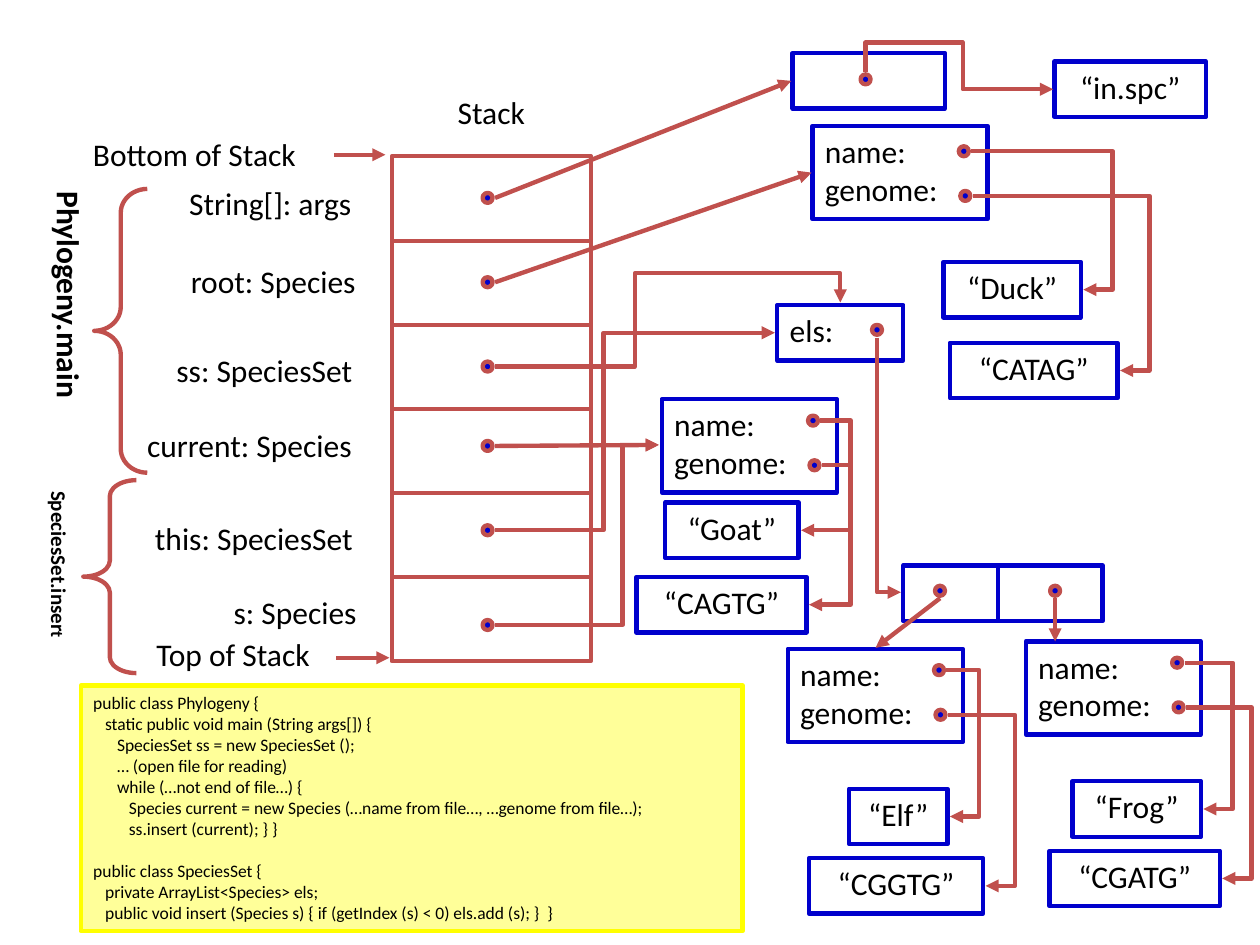
from lxml import etree
from pptx import Presentation
from pptx.dml.color import RGBColor
from pptx.enum.shapes import MSO_CONNECTOR, MSO_SHAPE
from pptx.enum.text import MSO_ANCHOR, MSO_AUTO_SIZE, PP_ALIGN
from pptx.oxml.ns import qn
from pptx.util import Cm, Pt

RED = RGBColor(0xC0, 0x50, 0x4D)
BLUE = RGBColor(0x00, 0x00, 0xCC)
BLACK = RGBColor(0x00, 0x00, 0x00)
PALE = RGBColor(0xFF, 0xFF, 0x99)
YELLOW = RGBColor(0xFF, 0xFF, 0x00)
RECT, OVAL, BRACE = MSO_SHAPE.RECTANGLE, MSO_SHAPE.OVAL, MSO_SHAPE.LEFT_BRACE
STRAIGHT, ELBOW = MSO_CONNECTOR.STRAIGHT, MSO_CONNECTOR.ELBOW
LEFT, CENTER = PP_ALIGN.LEFT, PP_ALIGN.CENTER
TOP, GROW = MSO_ANCHOR.TOP, MSO_AUTO_SIZE.SHAPE_TO_FIT_TEXT

ROW = 1.12
GAP = 0.15
SLOT = 9.83

LABELS = [
    ("Stack", 8.76, 1.75, 2.29),
    ("Bottom of Stack", 1.09, 2.59, 5.66),
    ("String[]: args", 3.0, 3.58, 4.9),
    ("root: Species", 3.15, 5.16, 4.72),
    ("ss: SpeciesSet", 2.74, 6.96, 5.18),
    ("current: Species", 2.16, 8.46, 5.74),
    ("this: SpeciesSet", 2.29, 10.34, 5.66),
    ("s: Species", 4.06, 11.84, 3.78),
    ("Top of Stack", 2.44, 12.67, 4.52),
]
SPECIES = [
    (16.38, 2.54, 0.51, ("“Duck”", 19.02, 5.28, 2.77), ("“CATAG”", 19.15, 6.91, 3.38)),
    (13.34, 8.05, 0.43, ("“Goat”", 13.41, 10.13, 2.69), ("“CAGTG”", 12.83, 11.63, 3.43)),
    (15.88, 13.08, 0.43, ("“Elf”", 17.12, 15.9, 1.98), ("“CGGTG”", 16.31, 17.3, 3.51)),
    (20.68, 12.93, 0.43, ("“Frog”", 21.62, 15.75, 2.59), ("“CGATG”", 21.16, 17.15, 3.43)),
]
CODE = [
    (0, "public class Phylogeny {"),
    (1, "static public void main (String args[]) {"),
    (2, "SpeciesSet ss = new SpeciesSet ();"),
    (2, "… (open file for reading)"),
    (2, "while (…not end of file…) {"),
    (3, "Species current = new Species (…name from file…, …genome from file…);"),
    (3, "ss.insert (current); } }"),
    (0, "public class SpeciesSet {"),
    (1, "private ArrayList<Species> els;"),
    (1, "public void insert (Species s) { if (getIndex (s) < 0) els.add (s); }  }"),
]


def add_run(para, text, size=18, bold=False):
    """Add one run of black Calibri."""
    run = para.add_run()
    run.text = text
    font = run.font
    font.name, font.size, font.bold = "Calibri", Pt(size), bold
    font.color.rgb = BLACK


def write(shape, lines, align=CENTER, wrap=False, size=18):
    """Fill a shape with one paragraph a line."""
    frame = shape.text_frame
    frame.word_wrap, frame.auto_size = wrap, GROW
    frame.vertical_anchor = TOP
    for i, line in enumerate(lines):
        para = frame.add_paragraph() if i else frame.paragraphs[0]
        para.alignment = align
        add_run(para, line, size)
    return frame


def draw(slide, kind, left, top, width, height, line, fill=None):
    """Add an outlined preset shape."""
    shape = slide.shapes.add_shape(kind, Cm(left), Cm(top), Cm(width), Cm(height))
    shape.shadow.inherit = False
    shape.line.color.rgb, shape.line.width = line, Pt(2.5)
    if fill is None:
        shape.fill.background()
    else:
        shape.fill.solid()
        shape.fill.fore_color.rgb = fill
    return shape


def add_dot(slide, x, y):
    """Add a pointer dot centred on a point."""
    draw(slide, OVAL, x - 0.1, y - 0.1, 0.2, 0.2, RED, BLUE)


def link(slide, start, stop, kind=STRAIGHT, arrow=True):
    """Add a red connector."""
    line = slide.shapes.add_connector(kind, *map(Cm, start + stop))
    line.line.color.rgb, line.line.width = RED, Pt(2.5)
    props = line._element.spPr
    if arrow:
        etree.SubElement(props.find(qn("a:ln")), qn("a:tailEnd"), type="triangle")
    etree.SubElement(props, qn("a:effectLst"))
    return props


def bend(slide, start, stop, turns, tall=False):
    """Add an elbow arrow turning at given places, leaving vertically if tall."""
    first, last = start, stop
    if tall:
        midx, midy = (start[0] + stop[0]) / 2, (start[1] + stop[1]) / 2
        half, rise = (stop[0] - start[0]) / 2, (stop[1] - start[1]) / 2
        first, last = (midx - rise, midy + half), (midx + rise, midy - half)
        start, stop = start[::-1], stop[::-1]
    props = link(slide, first, last, ELBOW)
    if tall:
        props.find(qn("a:xfrm")).set("rot", "5400000")
    geom = props.find(qn("a:prstGeom"))
    geom.set("prst", f"bentConnector{len(turns) + 2}")
    guides = geom.find(qn("a:avLst"))
    for i, turn in enumerate(turns):
        part = (turn - start[i]) / (stop[i] - start[i])
        etree.SubElement(guides, qn("a:gd"), name=f"adj{i + 1}",
                         fmla=f"val {round(part * 100000)}")


def add_label(slide, text, left, top, width):
    """Add a one-line label."""
    box = slide.shapes.add_textbox(Cm(left), Cm(top), Cm(width), Cm(1.02))
    write(box, [text])


def add_side(slide, runs, left, top, width, height):
    """Add a bold label that reads downwards."""
    box = slide.shapes.add_textbox(Cm(left), Cm(top), Cm(width), Cm(height))
    frame = write(box, [], wrap=True)
    frame._txBody.bodyPr.set("vert", "eaVert")
    para = frame.paragraphs[0]
    para.alignment = CENTER
    for text, size in runs:
        add_run(para, text, size, True)


def add_string(slide, text, left, top, width):
    """Add a boxed string value."""
    write(draw(slide, RECT, left, top, width, ROW, BLUE), [text])


def add_species(slide, left, top, drop, *values):
    """Add a species object with arrows to its two strings."""
    box = draw(slide, RECT, left, top, 3.53, 1.88, BLUE)
    write(box, ["name:", "genome:"], LEFT, True)
    for i, value in enumerate(values):
        x, y = left + 3.05 + 0.03 * i, top + drop + 0.9 * i
        add_string(slide, *value)
        add_dot(slide, x, y)
        edge = value[1] + value[3]
        turn = max(edge + 0.64, left + 3.81)
        bend(slide, (x + GAP, y), (edge + 0.05, value[2] + ROW / 2), [turn])


def add_stack(slide):
    """Add the stack frame, its slots and its end markers."""
    draw(slide, RECT, 7.9, 3.15, 4.01, 10.18, RED)
    for i in range(1, 7):
        y = 3.16 + 10.16 / 6 * i
        link(slide, (7.9, y), (11.91, y), arrow=False)
    link(slide, (6.73, 3.12), (7.77, 3.12))
    link(slide, (6.78, 13.26), (7.85, 13.26))


def add_heap(slide):
    """Add the array and set objects with their pointers."""
    for left, top, width in [(15.98, 1.07, 3.07), (18.21, 11.4, 1.91), (20.12, 11.4, 2.11)]:
        draw(slide, RECT, left, top, width, ROW, BLUE)
    write(draw(slide, RECT, 15.67, 6.15, 2.54, ROW, BLUE), ["els:"], LEFT, True)
    add_string(slide, "“in.spc”", 21.26, 1.24, 3.05)
    for x, y in [(17.45, 1.6), (17.68, 6.65), (18.95, 11.91), (21.27, 11.91)]:
        add_dot(slide, x, y)
    bend(slide, (17.45, 1.45), (21.23, 1.8), [0.86, 19.41], True)
    bend(slide, (17.68, 6.81), (18.16, 11.94), [], True)
    link(slide, (18.95, 12.06), (17.65, 13.06))
    link(slide, (21.27, 12.06), (21.27, 12.93))


def add_slots(slide):
    """Add the pointer of each stack slot."""
    slots = [
        (3.99, (15.95, 1.63), []),
        (5.69, (16.36, 3.48), []),
        (7.39, (16.94, 6.1), [12.8, 5.51]),
        (8.99, (13.28, 8.97), []),
        (10.69, (15.62, 6.71), [12.17]),
        (12.6, (13.28, 8.97), [12.55]),
    ]
    for y, stop, turns in slots:
        add_dot(slide, SLOT, y)
        start = (SLOT + GAP, y)
        if turns:
            bend(slide, start, stop, turns)
        else:
            link(slide, start, stop)


def add_code(slide):
    """Add the code listing."""
    box = draw(slide, RECT, 1.63, 13.82, 13.34, 4.95, YELLOW, PALE)
    frame = write(box, [text for _, text in CODE], LEFT, True, 10)
    for i, (level, _) in enumerate(CODE):
        para = frame.paragraphs[i]
        props = para._p.get_or_add_pPr()
        props.set("marL", str(Cm(0.24 * level)))
        if i and not level:
            para.space_before = Pt(12.2)


def main():
    """Build the slide."""
    deck = Presentation()
    deck.slide_width, deck.slide_height = Cm(25.4), Cm(19.05)
    slide = deck.slides.add_slide(deck.slide_layouts[6])
    add_stack(slide)
    for label in LABELS:
        add_label(slide, *label)
    for species in SPECIES:
        add_species(slide, *species)
    add_heap(slide)
    add_slots(slide)
    for top, height, curl in [(3.81, 5.72, 0.45), (9.68, 3.89, 0.3)]:
        left = 1.9 if top < 5 else 1.68
        draw(slide, BRACE, left, top, 1.07, height, RED).adjustments[0] = curl
    add_side(slide, [("Phylogeny.main", 18)], 0.64, 3.61, 1.27, 6.27)
    add_side(slide, [("SpeciesSet.inser", 12), ("t", 10)], 0.56, 9.65, 1.02, 4.8)
    add_code(slide)
    deck.save("out.pptx")


if __name__ == "__main__":
    main()
